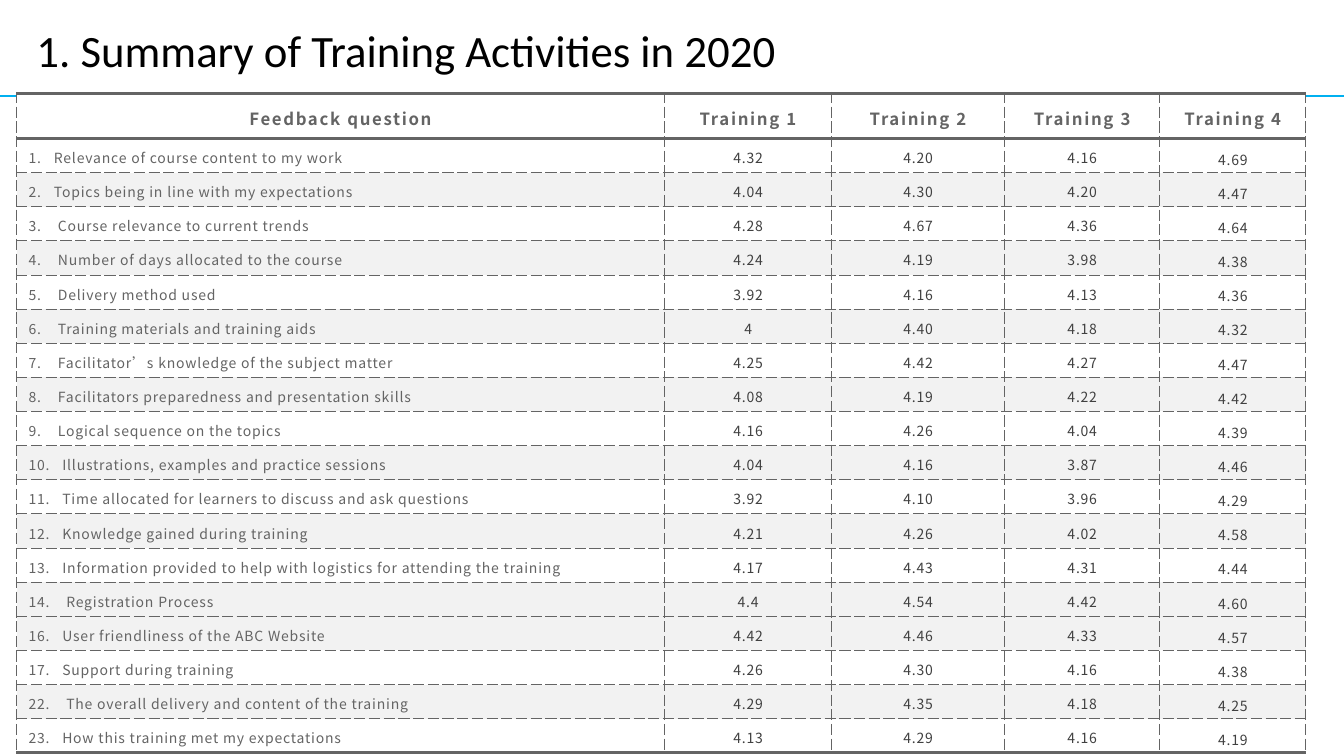
from dataclasses import dataclass
from typing import NamedTuple

from lxml import etree
from pptx import Presentation
from pptx import util as u
from pptx.dml.color import RGBColor
from pptx.enum import shapes, text
from pptx.oxml import ns


@dataclass(frozen=True)
class Theme:
    ink: str = "000000"
    rule: str = "00B0F0"
    gray: str = "646464"
    score: str = "404040"
    white: str = "FFFFFF"
    band: str = "F2F2F2"
    title_font: str = "Calibri"
    table_font: str = "Noto Sans CJK SC"
    title_size: float = 32
    header_size: float = 12
    body_size: float = 10
    thick: float = 2.25
    thin: float = 0.75


class TextStyle(NamedTuple):
    font: str
    size: float
    color: str
    bold: bool = False
    spacing: int = 0


class Feedback(NamedTuple):
    number: int
    question: str
    scores: str
    indent: float


class Column(NamedTuple):
    heading: str
    width: float
    inset: float = 0.1


THEME = Theme()
TITLE = TextStyle(THEME.title_font, THEME.title_size, THEME.ink)
HEADER = TextStyle(THEME.table_font, THEME.header_size, THEME.gray, True, 120)
QUESTION = TextStyle(THEME.table_font, THEME.body_size, THEME.gray, False, 60)
SCORE = QUESTION._replace(color=THEME.score)

SLIDE_WIDTH, SLIDE_HEIGHT = 33.87, 19.05
HEADER_HEIGHT, ROW_HEIGHT = 1.14, 0.86
SIDE_INSET = 0.3

COLUMNS = [
    Column("Feedback question", 16.33),
    Column("Training 1", 4.21),
    Column("Training 2", 4.36),
    Column("Training 3", 3.91),
    Column("Training 4", 3.68, 0.17),
]

FEEDBACK = [
    Feedback(1, "Relevance of course content to my work", "4.32 4.20 4.16 4.69", 0.64),
    Feedback(2, "Topics being in line with my expectations", "4.04 4.30 4.20 4.47", 0.64),
    Feedback(3, "Course relevance to current trends", "4.28 4.67 4.36 4.64", 0.74),
    Feedback(4, "Number of days allocated to the course", "4.24 4.19 3.98 4.38", 0.74),
    Feedback(5, "Delivery method used", "3.92 4.16 4.13 4.36", 0.74),
    Feedback(6, "Training materials and training aids", "4 4.40 4.18 4.32", 0.74),
    Feedback(7, "Facilitator’s knowledge of the subject matter", "4.25 4.42 4.27 4.47", 0.74),
    Feedback(8, "Facilitators preparedness and presentation skills", "4.08 4.19 4.22 4.42", 0.74),
    Feedback(9, "Logical sequence on the topics", "4.16 4.26 4.04 4.39", 0.74),
    Feedback(10, "Illustrations, examples and practice sessions", "4.04 4.16 3.87 4.46", 0.85),
    Feedback(11, "Time allocated for learners to discuss and ask questions", "3.92 4.10 3.96 4.29", 0.85),
    Feedback(12, "Knowledge gained during training", "4.21 4.26 4.02 4.58", 0.85),
    Feedback(13, "Information provided to help with logistics for attending the training",
             "4.17 4.43 4.31 4.44", 0.85),
    Feedback(14, "Registration Process", "4.4 4.54 4.42 4.60", 0.95),
    Feedback(16, "User friendliness of the ABC Website", "4.42 4.46 4.33 4.57", 0.85),
    Feedback(17, "Support during training", "4.26 4.30 4.16 4.38", 0.85),
    Feedback(22, "The overall delivery and content of the training", "4.29 4.35 4.18 4.25", 0.95),
    Feedback(23, "How this training met my expectations", "4.13 4.29 4.16 4.19", 0.85),
]


def add_run(paragraph, content: str, style: TextStyle) -> None:
    run = paragraph.add_run()
    run.text = content
    run.font.name = style.font
    run.font.size = u.Pt(style.size)
    run.font.bold = style.bold
    run.font.color.rgb = RGBColor.from_string(style.color)
    properties = run.font._element
    properties.set("spc", str(style.spacing))
    etree.SubElement(properties, ns.qn("a:ea"), typeface=style.font)


def add_border(cell, side: str, width: float) -> None:
    properties = cell._tc.get_or_add_tcPr()
    line = etree.SubElement(properties, ns.qn(f"a:ln{side}"), w=str(u.Pt(width)))
    fill = etree.SubElement(line, ns.qn("a:solidFill"))
    etree.SubElement(fill, ns.qn("a:srgbClr"), val=THEME.gray)
    dash = "solid" if width == THEME.thick else "sysDash"
    etree.SubElement(line, ns.qn("a:prstDash"), val=dash)


def fill_cell(cell, content: str, style: TextStyle, fill: str, inset: float,
              top: float, bottom: float, indent: float = 0) -> None:
    for side, width in (("L", THEME.thin), ("R", THEME.thin), ("T", top), ("B", bottom)):
        add_border(cell, side, width)
    cell.fill.solid()
    cell.fill.fore_color.rgb = RGBColor.from_string(fill)
    cell.vertical_anchor = text.MSO_ANCHOR.MIDDLE
    cell.margin_left = cell.margin_right = u.Cm(SIDE_INSET)
    cell.margin_top = cell.margin_bottom = u.Cm(inset)
    paragraph = cell.text_frame.paragraphs[0]
    paragraph.line_spacing = 1.2
    paragraph.alignment = text.PP_ALIGN.LEFT if indent else text.PP_ALIGN.CENTER
    if indent:
        properties = paragraph._p.get_or_add_pPr()
        properties.set("marL", str(u.Cm(indent)))
        properties.set("indent", str(-u.Cm(indent)))
    add_run(paragraph, content, style)


def add_rule(slide) -> None:
    height = u.Cm(2.42)
    rule = slide.shapes.add_connector(
        shapes.MSO_CONNECTOR.STRAIGHT, 0, height, u.Cm(SLIDE_WIDTH), height)
    rule.line.color.rgb = RGBColor.from_string(THEME.rule)
    rule.line.width = u.Pt(1)
    etree.SubElement(rule._element.spPr, ns.qn("a:effectLst"))


def add_title(slide) -> None:
    shape = slide.shapes.add_textbox(u.Cm(0.67), u.Cm(0.44), u.Cm(24.3), u.Cm(1.62))
    shape.text_frame.word_wrap = True
    shape.text_frame.auto_size = text.MSO_AUTO_SIZE.SHAPE_TO_FIT_TEXT
    add_run(shape.text_frame.paragraphs[0], "1. Summary of Training Activities in 2020", TITLE)


def add_feedback_table(slide) -> None:
    width = sum(column.width for column in COLUMNS)
    height = HEADER_HEIGHT + ROW_HEIGHT * len(FEEDBACK)
    table = slide.shapes.add_table(
        len(FEEDBACK) + 1, len(COLUMNS), u.Cm(0.42), u.Cm(2.35), u.Cm(width), u.Cm(height)).table
    table.first_row = table.horz_banding = False
    for index, row in enumerate(table.rows):
        row.height = u.Cm(ROW_HEIGHT if index else HEADER_HEIGHT)
    for index, column in enumerate(COLUMNS):
        table.columns[index].width = u.Cm(column.width)
        fill_cell(table.cell(0, index), column.heading, HEADER, THEME.white, 0.1,
                  THEME.thick, THEME.thick)
    for row, feedback in enumerate(FEEDBACK, start=1):
        fill = THEME.white if feedback.number % 2 else THEME.band
        top = THEME.thick if row == 1 else THEME.thin
        bottom = THEME.thick if row == len(FEEDBACK) else THEME.thin
        fill_cell(table.cell(row, 0), f"{feedback.number}.\t{feedback.question}", QUESTION,
                  fill, COLUMNS[0].inset, top, bottom, feedback.indent)
        for index, score in enumerate(feedback.scores.split(), start=1):
            fill_cell(table.cell(row, index), score, SCORE, fill, COLUMNS[index].inset, top, bottom)


def main() -> None:
    presentation = Presentation()
    presentation.slide_width = u.Cm(SLIDE_WIDTH)
    presentation.slide_height = u.Cm(SLIDE_HEIGHT)
    slide = presentation.slides.add_slide(presentation.slide_layouts[6])
    add_rule(slide)
    add_title(slide)
    add_feedback_table(slide)
    presentation.save("out.pptx")


if __name__ == "__main__":
    main()
